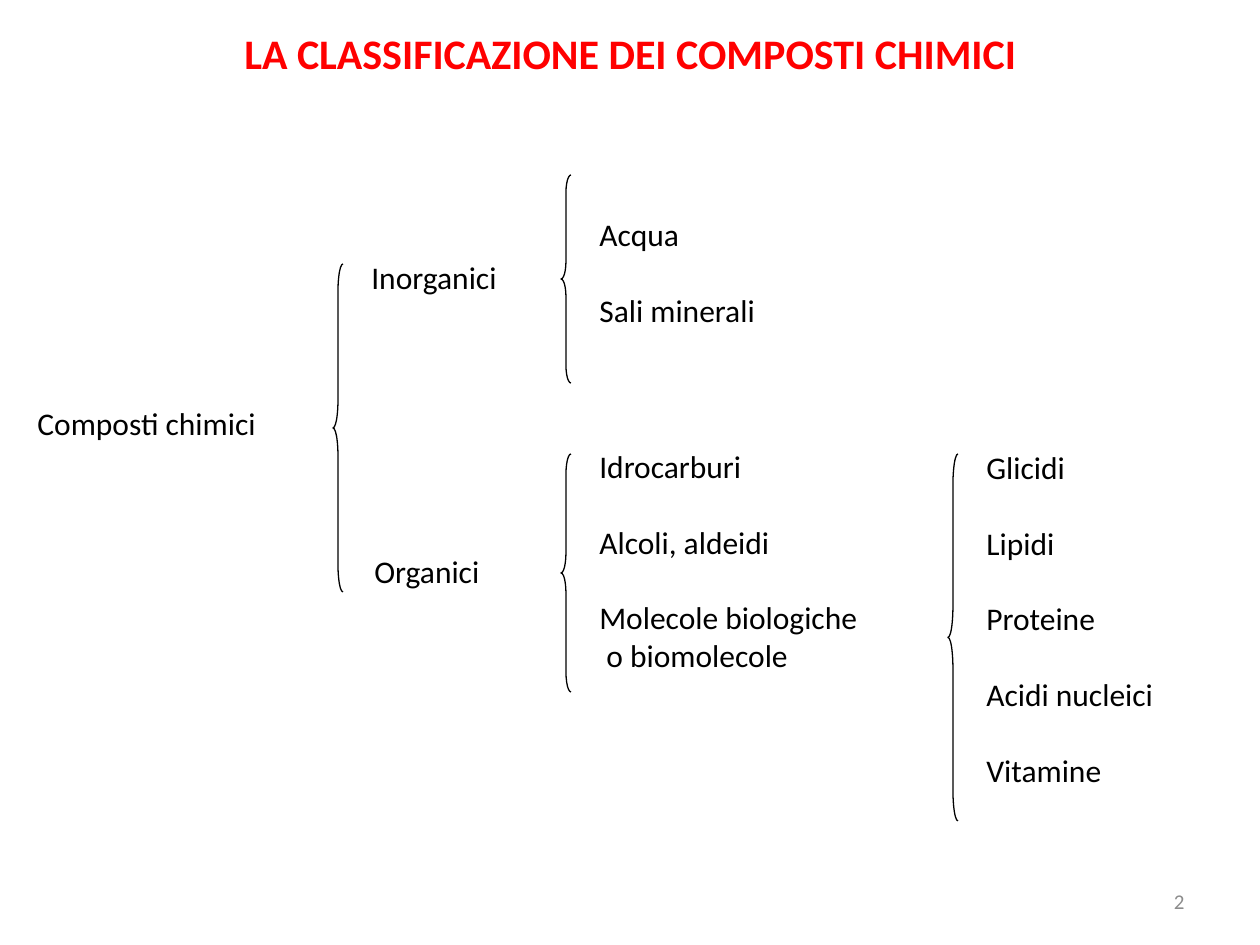
from pptx import Presentation
from pptx.dml.color import RGBColor
from pptx.enum.shapes import MSO_SHAPE as Shape
from pptx.enum.text import MSO_ANCHOR as Anchor, PP_ALIGN as Align
from pptx.util import Emu, Pt

COLORS = {"title": "FF0000", "text": "000000", "number": "8C8C8C"}
FONT = "Calibri"
SCALE = 914400 / 126
BRACE_WIDTH = 10
BRACE_CURVE = 0.0833
LINE_GAP = 21.6

TITLE = ("LA CLASSIFICAZIONE DEI COMPOSTI CHIMICI", (32, 21, 1197, 63))
PAGE_NUMBER = ("2", (903, 876, 294, 50))

LABELS = [
    ("Composti chimici", (25, 398, 306, 54)),
    ("Inorganici", (359, 252, 202, 54)),
    ("Organici", (362, 546, 163, 54)),
]
GROUPS = [
    (["Acqua", "Sali minerali"], (587, 209, 227, 139)),
    (["Idrocarburi", "Alcoli, aldeidi", "Molecole biologiche\n o biomolecole"],
     (587, 441, 353, 265)),
    (["Glicidi", "Lipidi", "Proteine", "Acidi nucleici", "Vitamine"],
     (974, 442, 241, 391)),
]
BRACES = [(333, 264, 328), (561, 175, 208), (561, 454, 238), (948, 454, 367)]


def px(value):
    return Emu(round(value * SCALE))


def add_text(slide, items, box, size=18, color="text", bold=False,
             align=Align.LEFT, anchor=Anchor.TOP, wrap=False):
    frame = slide.shapes.add_textbox(*map(px, box)).text_frame
    frame.word_wrap = wrap
    frame.vertical_anchor = anchor
    frame.text = "\n".join(items)
    item_ends = [line == item.split("\n")[-1]
                 for item in items for line in item.split("\n")]
    for paragraph, ends_item in zip(frame.paragraphs, item_ends):
        paragraph.alignment = align
        if ends_item and paragraph.text != items[-1].split("\n")[-1]:
            paragraph.space_after = Pt(LINE_GAP)
        for run in paragraph.runs:
            run.font.name = FONT
            run.font.size = Pt(size)
            run.font.bold = bold
            run.font.color.rgb = RGBColor.from_string(COLORS[color])


def add_brace(slide, left, top, height):
    shape = slide.shapes.add_shape(
        Shape.LEFT_BRACE, px(left), px(top), px(BRACE_WIDTH), px(height))
    shape.adjustments[0] = BRACE_CURVE * height / BRACE_WIDTH
    shape.shadow.inherit = False
    shape.fill.background()
    shape.line.color.rgb = RGBColor.from_string(COLORS["text"])
    shape.line.width = Pt(0.75)


def main():
    presentation = Presentation()
    presentation.slide_width, presentation.slide_height = px(1260), px(945)
    slide = presentation.slides.add_slide(presentation.slide_layouts[6])

    title, box = TITLE
    add_text(slide, [title], box, 24, "title", True, Align.CENTER, wrap=True)
    for label, box in LABELS:
        add_text(slide, [label], box)
    for items, box in GROUPS:
        add_text(slide, items, box)
    for brace in BRACES:
        add_brace(slide, *brace)
    number, box = PAGE_NUMBER
    add_text(slide, [number], box, 12, "number", align=Align.RIGHT,
             anchor=Anchor.MIDDLE, wrap=True)

    presentation.save("out.pptx")


if __name__ == "__main__":
    main()
